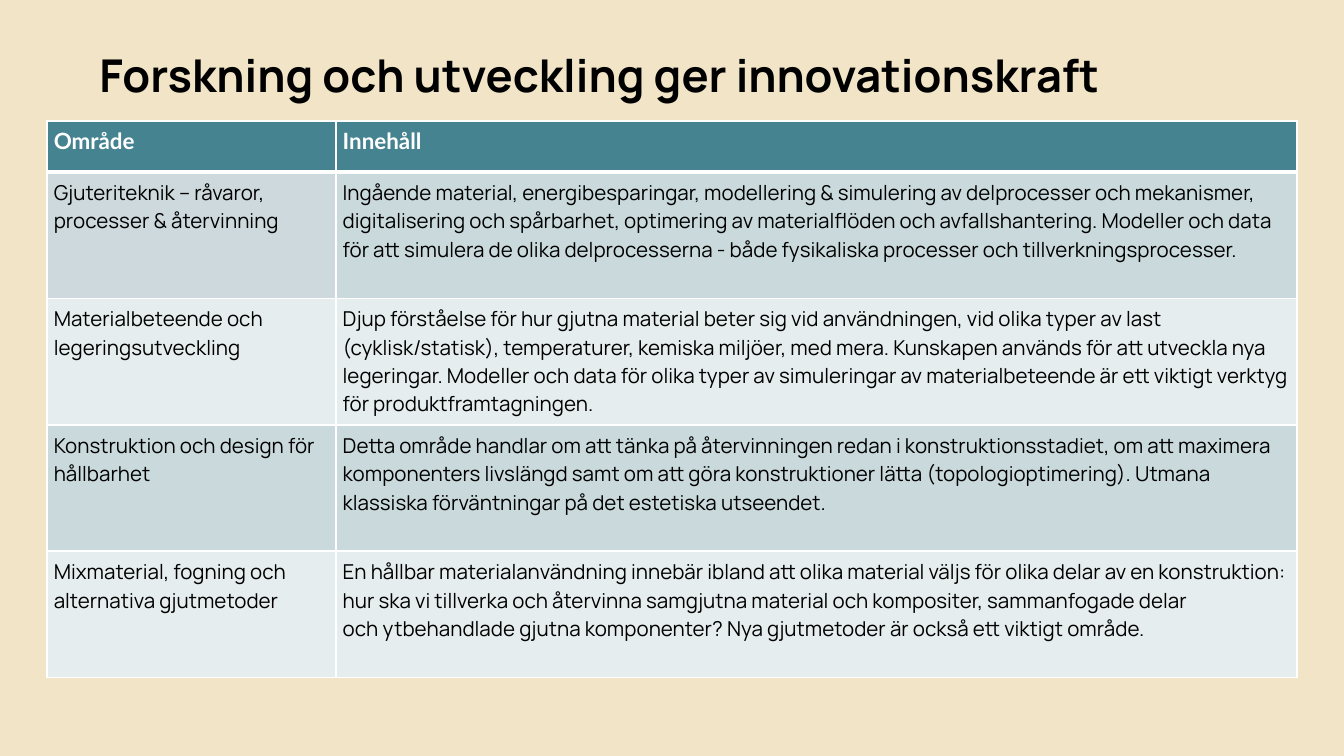
from dataclasses import dataclass

import pptx
import pptx.dml.color
import pptx.enum.text
import pptx.oxml
import pptx.oxml.ns
import pptx.util
from pptx.util import Inches


@dataclass(frozen=True)
class Theme:
    background: str = "F2E4C6"
    text: str = "000000"
    white: str = "FFFFFF"
    header: str = "458391"
    band_dark: str = "CADADC"
    band_light: str = "E6EDEE"
    first_area: str = "CDD9DC"
    body_font: str = "Manrope"
    header_font: str = "Lato"
    title_size: float = 24.2
    header_size: float = 12
    body_size: float = 11
    border: float = 1
    header_border: float = 3
    inset: float = 0.05


THEME = Theme()
NO_BREAK_SPACE = chr(160)
TITLE = "Forskning och utveckling ger innovationskraft"
COLUMN_WIDTHS = (2.15, 7.15)
HEADER_HEIGHT = 0.38
ROW_HEIGHT = 0.94
ROWS = [
    ("Område", "Innehåll"),
    ("Gjuteriteknik – råvaror, processer & återvinning",
     "Ingående material, energibesparingar, modellering & simulering av "
     "delprocesser och mekanismer, digitalisering och spårbarhet, optimering "
     "av materialflöden och avfallshantering. Modeller och data för att "
     "simulera de olika delprocesserna - både fysikaliska processer och "
     "tillverkningsprocesser."),
    ("Materialbeteende och legeringsutveckling",
     "Djup förståelse för hur gjutna material beter sig vid användningen, vid "
     "olika typer av last (cyklisk/statisk), temperaturer, kemiska miljöer, "
     "med mera. Kunskapen används för att utveckla nya legeringar. Modeller "
     "och data för olika typer av simuleringar av materialbeteende är ett "
     "viktigt verktyg för produktframtagningen."),
    ("Konstruktion och design för hållbarhet",
     "Detta område handlar om att tänka på återvinningen redan i "
     "konstruktionsstadiet, om att maximera komponenters livslängd samt om "
     "att göra konstruktioner lätta (topologioptimering). Utmana klassiska "
     f"förväntningar på det estetiska utseendet.{NO_BREAK_SPACE}"),
    ("Mixmaterial, fogning och alternativa gjutmetoder",
     "En hållbar materialanvändning innebär ibland att olika material väljs "
     "för olika delar av en konstruktion: hur ska vi tillverka och återvinna "
     "samgjutna material och kompositer, sammanfogade delar "
     f"och{NO_BREAK_SPACE}ytbehandlade gjutna komponenter? Nya gjutmetoder "
     "är också ett viktigt område."),
]


def color(value):
    return pptx.dml.color.RGBColor.from_string(value)


def set_font(paragraph, name, size, fill, bold):
    font = paragraph.font
    font.name = name
    font.size = pptx.util.Pt(size)
    font.bold = bold
    font.color.rgb = color(fill)


def set_margins(holder):
    """Give a text frame or a table cell the same inset on all sides."""
    for side in ("left", "top", "right", "bottom"):
        setattr(holder, f"margin_{side}", Inches(THEME.inset))


def set_borders(cell, top, bottom):
    # Border lines must come before the fill in the cell properties
    properties = cell._tc.get_or_add_tcPr()
    widths = {"L": THEME.border, "R": THEME.border, "T": top, "B": bottom}
    for position, (side, width) in enumerate(widths.items()):
        line = pptx.oxml.parse_xml(
            f'<a:ln{side} {pptx.oxml.ns.nsdecls("a")} w="{pptx.util.Pt(width)}">'
            f'<a:solidFill><a:srgbClr val="{THEME.white}"/></a:solidFill>'
            f'</a:ln{side}>')
        properties.insert(position, line)


def add_title(page):
    title = page.shapes.title
    title.left, title.top = Inches(0.69), Inches(0.3)
    title.width, title.height = Inches(8.62), Inches(0.56)
    frame = title.text_frame
    frame.text = TITLE
    frame.word_wrap = True
    frame.auto_size = pptx.enum.text.MSO_AUTO_SIZE.NONE
    frame.vertical_anchor = pptx.enum.text.MSO_ANCHOR.MIDDLE
    set_margins(frame)
    paragraph = frame.paragraphs[0]
    paragraph.alignment = pptx.enum.text.PP_ALIGN.LEFT
    paragraph.line_spacing = 0.9
    set_font(paragraph, THEME.body_font, THEME.title_size, THEME.text, True)


def cell_fill(row, column):
    if row == 0:
        return THEME.header
    if (row, column) == (1, 0):
        return THEME.first_area
    return THEME.band_dark if row % 2 else THEME.band_light


def fill_cell(cell, text, row, column):
    cell.text = text
    set_margins(cell)
    cell.fill.solid()
    cell.fill.fore_color.rgb = color(cell_fill(row, column))
    set_borders(cell,
                top=THEME.header_border if row == 1 else THEME.border,
                bottom=THEME.header_border if row == 0 else THEME.border)
    paragraph = cell.text_frame.paragraphs[0]
    if row == 0:
        set_font(paragraph, THEME.header_font, THEME.header_size, THEME.white, True)
    else:
        set_font(paragraph, THEME.body_font, THEME.body_size, THEME.text, False)


def add_research_table(page):
    height = HEADER_HEIGHT + ROW_HEIGHT * (len(ROWS) - 1)
    table = page.shapes.add_table(
        len(ROWS), len(COLUMN_WIDTHS), Inches(0.35), Inches(0.9),
        Inches(sum(COLUMN_WIDTHS)), Inches(height)).table
    for column, width in zip(table.columns, COLUMN_WIDTHS):
        column.width = Inches(width)
    for row, texts in enumerate(ROWS):
        table.rows[row].height = Inches(ROW_HEIGHT if row else HEADER_HEIGHT)
        for column, text in enumerate(texts):
            fill_cell(table.cell(row, column), text, row, column)


def main():
    # Widescreen deck, 16:9
    deck = pptx.Presentation()
    deck.slide_width = Inches(10)
    deck.slide_height = deck.slide_width * 9 // 16

    # Title-only page on a sand background
    page = deck.slides.add_slide(deck.slide_layouts[5])
    page.background.fill.solid()
    page.background.fill.fore_color.rgb = color(THEME.background)

    # Content
    add_research_table(page)
    add_title(page)
    deck.save("out.pptx")


if __name__ == "__main__":
    main()
